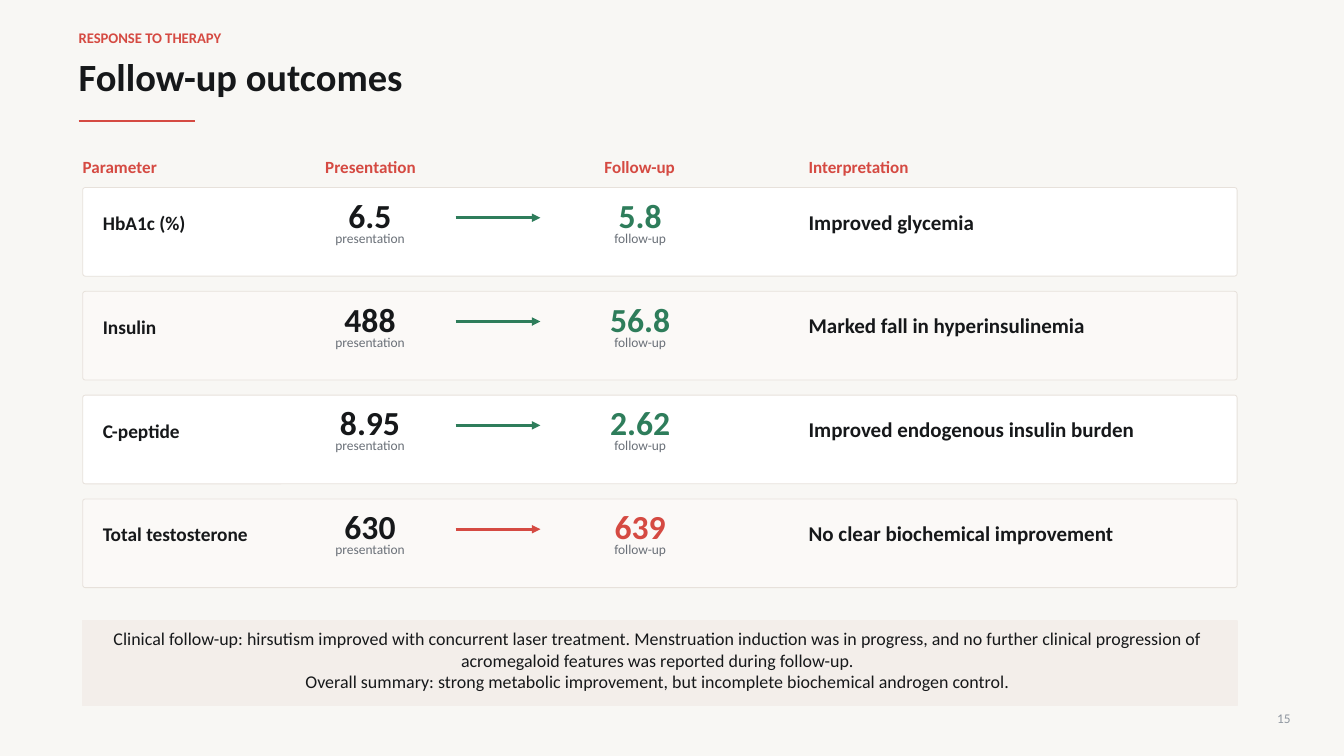
import dataclasses

import lxml.etree
import pptx
import pptx.dml.color
import pptx.enum.shapes
import pptx.enum.text
import pptx.oxml.ns
import pptx.util

COLUMNS, ROWS = 133.3, 75
CELL = pptx.util.Inches(0.1)
ALIGN = pptx.enum.text.PP_ALIGN
SHAPES = pptx.enum.shapes.MSO_SHAPE

OUTCOMES = [
    ("HbA1c (%)", "6.5", "5.8", "Improved glycemia", True),
    ("Insulin", "488", "56.8", "Marked fall in hyperinsulinemia", True),
    ("C-peptide", "8.95", "2.62", "Improved endogenous insulin burden", True),
    ("Total testosterone", "630", "639", "No clear biochemical improvement", False),
]
SUMMARY = (
    "Clinical follow-up: hirsutism improved with concurrent laser treatment. "
    "Menstruation induction was in progress, and no further clinical progression "
    "of acromegaloid features was reported during follow-up.\n"
    "Overall summary: strong metabolic improvement, but incomplete biochemical "
    "androgen control."
)


@dataclasses.dataclass(frozen=True)
class Theme:
    font: str = "Calibri"
    background: str = "F8F7F4"
    ink: str = "16181A"
    accent: str = "D54A42"
    improved: str = "2E7D5B"
    muted: str = "6A7078"
    page: str = "8F969F"
    card: str = "FFFFFF"
    card_alternate: str = "FBF9F7"
    card_line: str = "E7E1DB"
    panel: str = "F3EEEA"
    title_size: float = 27.5
    value_size: float = 24
    finding_size: float = 15
    parameter_size: float = 13.8
    summary_size: float = 12.8
    heading_size: float = 12.2
    eyebrow_size: float = 10.5
    caption_size: float = 9.6
    page_size: float = 9.5


THEME = Theme()


@dataclasses.dataclass(frozen=True)
class Box:
    """An area in grid columns and rows."""
    left: float
    top: float
    width: float
    height: float

    def inner(self, left, top, width, height):
        return Box(self.left + left, self.top + top, width, height)

    def lengths(self):
        return [grid(value) for value in dataclasses.astuple(self)]


def grid(count):
    return round(count * CELL)


def rgb(color):
    return pptx.dml.color.RGBColor.from_string(color)


def write(shape, text, size, color, bold=False, align=ALIGN.LEFT):
    frame = shape.text_frame
    frame.text = text
    frame.word_wrap = True
    frame.auto_size = pptx.enum.text.MSO_AUTO_SIZE.NONE
    frame.vertical_anchor = pptx.enum.text.MSO_ANCHOR.MIDDLE
    frame.margin_left = frame.margin_top = frame.margin_right = frame.margin_bottom = 0
    for paragraph in frame.paragraphs:
        paragraph.alignment = align
        for run in paragraph.runs:
            run.font.name = THEME.font
            run.font.size = pptx.util.Pt(size)
            run.font.bold = bold
            run.font.color.rgb = rgb(color)


def add_text(slide, box, *args, **style):
    write(slide.shapes.add_textbox(*box.lengths()), *args, **style)


def add_panel(slide, box, kind, fill, line, width):
    shape = slide.shapes.add_shape(kind, *box.lengths())
    shape.shadow.inherit = False
    shape.fill.solid()
    shape.fill.fore_color.rgb = rgb(fill)
    shape.line.color.rgb = rgb(line)
    shape.line.width = pptx.util.Pt(width)
    return shape


def add_rule(slide, left, top, length, color, width, arrow=False):
    rule = slide.shapes.add_connector(
        pptx.enum.shapes.MSO_CONNECTOR.STRAIGHT,
        grid(left), grid(top), grid(left + length), grid(top))
    rule.line.color.rgb = rgb(color)
    rule.line.width = pptx.util.Pt(width)
    properties = rule._element.spPr
    if arrow:
        line = properties.find(pptx.oxml.ns.qn("a:ln"))
        lxml.etree.SubElement(line, pptx.oxml.ns.qn("a:tailEnd"), type="triangle")
    lxml.etree.SubElement(properties, pptx.oxml.ns.qn("a:effectLst"))


def add_header(slide, box):
    add_text(slide, box.inner(0, 0, 32, 1.8), "RESPONSE TO THERAPY",
             THEME.eyebrow_size, THEME.accent, bold=True)
    title = slide.shapes.title
    title.left, title.top, title.width, title.height = box.inner(0, 2.4, 72, 4.8).lengths()
    write(title, "Follow-up outcomes", THEME.title_size, THEME.ink, bold=True)
    add_rule(slide, box.left, box.top + box.height, 11.5, THEME.accent, 1.6)


def add_headings(slide, box):
    for heading, left, width, align in [
        ("Parameter", 0, 18, ALIGN.LEFT),
        ("Presentation", 21.3, 14.5, ALIGN.CENTER),
        ("Follow-up", 48, 14.5, ALIGN.CENTER),
        ("Interpretation", 72, 20, ALIGN.LEFT),
    ]:
        add_text(slide, box.inner(left, 0, width, box.height), heading,
                 THEME.heading_size, THEME.accent, bold=True, align=align)


def add_outcome(slide, box, fill, outcome):
    parameter, before, after, finding, is_improved = outcome
    color = THEME.improved if is_improved else THEME.accent
    card = add_panel(slide, box, SHAPES.ROUNDED_RECTANGLE, fill, THEME.card_line, 0.6)
    card.adjustments[0] = 0.03
    add_text(slide, box.inner(2, 2.6, 19.5, 1.8), parameter,
             THEME.parameter_size, THEME.ink, bold=True)
    for left, value, caption, value_color in [
        (22, before, "presentation", THEME.ink),
        (48.8, after, "follow-up", color),
    ]:
        add_text(slide, box.inner(left, 1.3, 13, 2.8), value,
                 THEME.value_size, value_color, bold=True, align=ALIGN.CENTER)
        add_text(slide, box.inner(left, 4.4, 13, 1.2), caption,
                 THEME.caption_size, THEME.muted, align=ALIGN.CENTER)
    add_rule(slide, box.left + 37, box.top + 3, 8.4, color, 2, arrow=True)
    add_text(slide, box.inner(72, 2.5, 39.5, 1.8), finding,
             THEME.finding_size, THEME.ink, bold=True)


def add_outcomes(slide, box):
    """Stack one card per outcome, separated by equal gaps."""
    gap = 1.5
    height = (box.height + gap) / len(OUTCOMES) - gap
    for index, outcome in enumerate(OUTCOMES):
        fill = THEME.card_alternate if index % 2 else THEME.card
        row = box.inner(0, index * (height + gap), box.width, height)
        add_outcome(slide, row, fill, outcome)


def add_summary(slide, box):
    add_panel(slide, box, SHAPES.RECTANGLE, THEME.panel, THEME.panel, 1)
    add_text(slide, box.inner(2, 1.5, 110, 4.8), SUMMARY,
             THEME.summary_size, THEME.ink, align=ALIGN.CENTER)


def main():
    presentation = pptx.Presentation()
    presentation.slide_width, presentation.slide_height = grid(COLUMNS), grid(ROWS)
    title_only = presentation.slide_layouts[5]
    slide = presentation.slides.add_slide(title_only)
    slide.background.fill.solid()
    slide.background.fill.fore_color.rgb = rgb(THEME.background)

    add_header(slide, Box(7.8, 2.8, 72, 9.2))
    content = Box(8.2, 15.6, 114.5, 54.4)
    add_headings(slide, content.inner(0, 0, content.width, 1.8))
    add_outcomes(slide, content.inner(0, 3, content.width, 39.7))
    add_summary(slide, content.inner(0, 46, content.width, 8.4))
    add_text(slide, Box(124.5, 70.3, 3.5, 1.8), "15",
             THEME.page_size, THEME.page, align=ALIGN.RIGHT)
    presentation.save("out.pptx")


if __name__ == "__main__":
    main()
